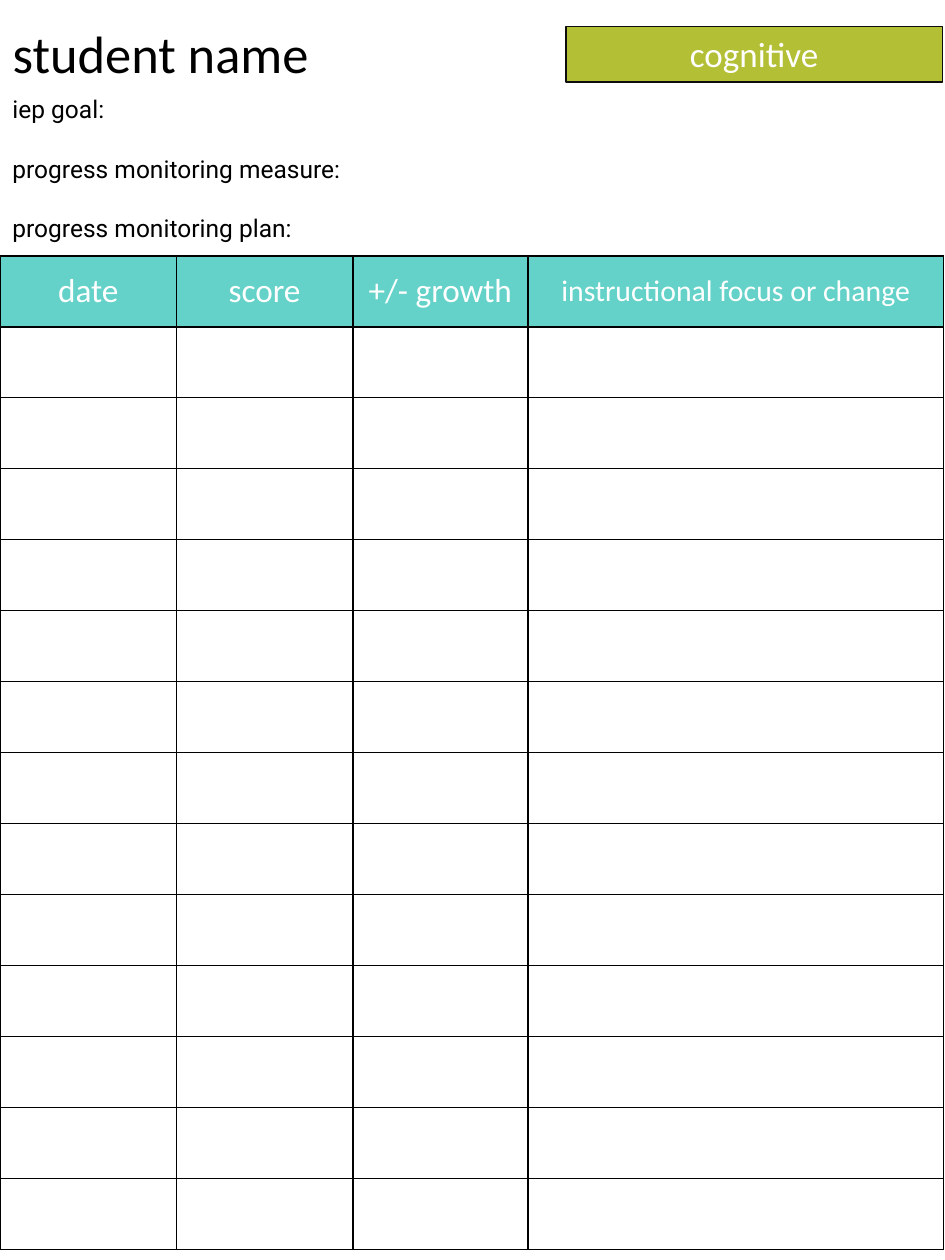
import pptx
import pptx.dml.color
import pptx.enum.shapes
import pptx.enum.text
import pptx.oxml.ns
import pptx.util
from dataclasses import dataclass
from lxml import etree

Inches = pptx.util.Inches
Align = pptx.enum.text.PP_ALIGN
Anchor = pptx.enum.text.MSO_ANCHOR


@dataclass(frozen=True)
class Theme:
    heading_font: str = "Calibri"
    body_font: str = "Roboto"
    ink: str = "000000"
    paper: str = "FFFFFF"
    header_fill: str = "64D2C8"
    label_fill: str = "B3BF35"
    label_line: str = "0D0D0D"
    title_size: int = 30
    label_size: int = 20
    detail_size: int = 14
    detail_gap: int = 17
    line_width: int = 1


@dataclass(frozen=True)
class Box:
    left: float
    top: float
    width: float
    height: float

    def lengths(self) -> tuple:
        return tuple(Inches(n) for n in (self.left, self.top, self.width, self.height))


@dataclass(frozen=True)
class Column:
    heading: str
    width: float
    size: int = 19


THEME = Theme()
COLUMNS = [
    Column("date", 1.4),
    Column("score", 1.4),
    Column("+/- growth", 1.39),
    Column("instructional focus or change", 3.3, 17),
]
ENTRY_ROWS = 13
DETAILS = ["iep goal:", "progress monitoring measure:", "progress monitoring plan:"]


def rgb(value: str) -> pptx.dml.color.RGBColor:
    return pptx.dml.color.RGBColor.from_string(value)


def style_paragraph(para, font: str, size: float, color: str, align=Align.LEFT) -> None:
    para.alignment = align
    para.font.name = font
    para.font.size = pptx.util.Pt(size)
    para.font.bold = False
    para.font.color.rgb = rgb(color)


def add_borders(cell) -> None:
    properties = cell._tc.get_or_add_tcPr()
    name = pptx.oxml.ns.qn
    for side in ("a:lnL", "a:lnR", "a:lnT", "a:lnB"):
        line = etree.SubElement(properties, name(side), w=str(pptx.util.Pt(THEME.line_width)))
        fill = etree.SubElement(line, name("a:solidFill"))
        etree.SubElement(fill, name("a:srgbClr"), val=THEME.ink)


def add_progress_table(page, box: Box) -> None:
    row_count = ENTRY_ROWS + 1
    table = page.shapes.add_table(row_count, len(COLUMNS), *box.lengths()).table
    table.horz_banding = False
    for row in table.rows:
        row.height = Inches(box.height / row_count)
        for cell in row.cells:
            add_borders(cell)
            cell.fill.background()
    for index, column in enumerate(COLUMNS):
        table.columns[index].width = Inches(column.width)
        cell = table.cell(0, index)
        cell.text = column.heading
        cell.vertical_anchor = Anchor.MIDDLE
        cell.fill.solid()
        cell.fill.fore_color.rgb = rgb(THEME.header_fill)
        style_paragraph(cell.text_frame.paragraphs[0], THEME.heading_font,
                        column.size, THEME.paper, Align.CENTER)


def set_title(page, text: str, box: Box) -> None:
    title = page.shapes.title
    title.left, title.top, title.width, title.height = box.lengths()
    frame = title.text_frame
    frame.text = text
    frame.word_wrap = True
    frame.auto_size = pptx.enum.text.MSO_AUTO_SIZE.NONE
    frame.vertical_anchor = Anchor.TOP
    style_paragraph(frame.paragraphs[0], THEME.heading_font, THEME.title_size, THEME.ink)


def add_details(page, lines: list[str], box: Box) -> None:
    frame = page.shapes.add_textbox(*box.lengths()).text_frame
    frame.word_wrap = True
    frame.text = "\n".join(lines)
    for index, para in enumerate(frame.paragraphs):
        para.space_before = pptx.util.Pt(THEME.detail_gap if index else 0)
        style_paragraph(para, THEME.body_font, THEME.detail_size, THEME.ink)


def add_label(page, text: str, box: Box) -> None:
    label = page.shapes.add_shape(pptx.enum.shapes.MSO_SHAPE.RECTANGLE, *box.lengths())
    label.shadow.inherit = False
    label.fill.solid()
    label.fill.fore_color.rgb = rgb(THEME.label_fill)
    label.line.color.rgb = rgb(THEME.label_line)
    label.line.width = pptx.util.Pt(THEME.line_width)
    frame = label.text_frame
    frame.text = text
    frame.word_wrap = True
    frame.vertical_anchor = Anchor.TOP
    style_paragraph(frame.paragraphs[0], THEME.heading_font, THEME.label_size,
                    THEME.paper, Align.CENTER)


def main() -> None:
    deck = pptx.Presentation()
    deck.slide_width, deck.slide_height = Inches(7.5), Inches(10)
    page = deck.slides.add_slide(deck.slide_layouts.get_by_name("Title Only"))

    # Progress log
    add_progress_table(page, Box(0, 2.03, 7.5, 7.89))

    # Student heading and goal details
    set_title(page, "student name", Box(0, 0.12, 2.66, 0.61))
    add_details(page, DETAILS, Box(0, 0.7, 7.5, 1.28))

    # Goal area
    add_label(page, "cognitive", Box(4.49, 0.21, 2.99, 0.44))

    deck.save("out.pptx")


if __name__ == "__main__":
    main()
